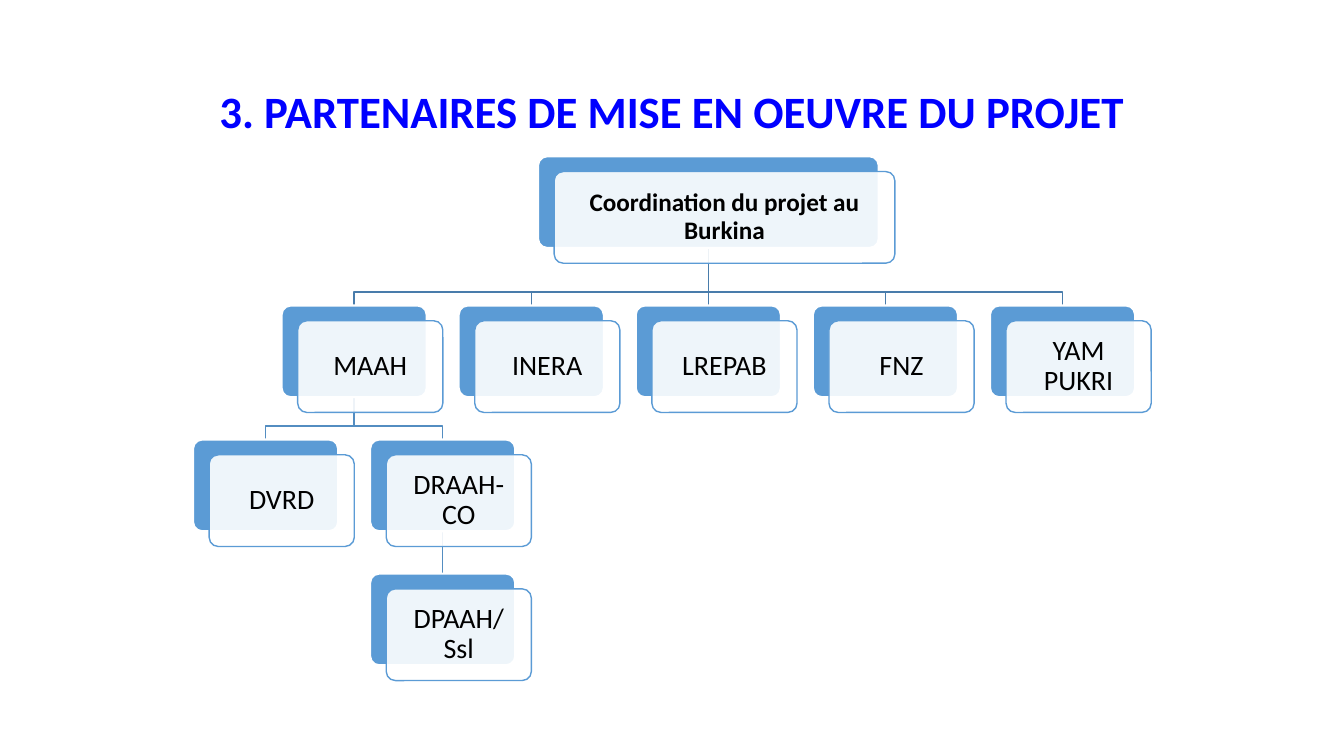
from lxml.etree import SubElement
from pptx import Presentation
from pptx.dml.color import RGBColor
from pptx.enum.shapes import MSO_CONNECTOR, MSO_SHAPE
from pptx.enum.text import MSO_ANCHOR, PP_ALIGN
from pptx.oxml.ns import qn
from pptx.util import Pt

BLUE = "5B9BD5"
CARD_WIDTH, ROOT_WIDTH, CARD_HEIGHT = 103.7, 243.4, 65.5
SHIFT_X, SHIFT_Y = 11.5, 10.9
ROOT_X, ROOT_TOP = 506, 111.6
COLUMN_STEP, ROW_STEP, FIRST_ROW = 126.5, 95.75, 218.2
BEND = 9.7

PARTNERS = ["MAAH", "INERA", "LREPAB", "FNZ", "YAM PUKRI"]
DIRECTORATES = ["DVRD", "DRAAH-CO"]


def colour(value):
    return RGBColor.from_string(value)


def write_text(shape, text, size, text_colour, bold, inset):
    frame = shape.text_frame
    frame.word_wrap = True
    frame.vertical_anchor = MSO_ANCHOR.MIDDLE
    frame.margin_left = frame.margin_right = Pt(inset)
    frame.margin_top = frame.margin_bottom = Pt(inset)
    para = frame.paragraphs[0]
    para.text = text
    para.alignment = PP_ALIGN.CENTER
    para.line_spacing = 0.9
    para.font.name = "Calibri"
    para.font.size = Pt(size)
    para.font.bold = bold
    para.font.color.rgb = colour(text_colour)


def add_title(page, text):
    box = page.shapes.add_textbox(Pt(66), Pt(60), Pt(828), Pt(42.4))
    write_text(box, text, 32, "0000FF", True, 3.6)


def add_plate(page, left, top, width, fill, line, weight):
    plate = page.shapes.add_shape(MSO_SHAPE.ROUNDED_RECTANGLE, Pt(left), Pt(top),
                                  Pt(width), Pt(CARD_HEIGHT))
    plate.adjustments[0] = 0.1
    plate.shadow.inherit = False
    plate.fill.solid()
    plate.fill.fore_color.rgb = colour(fill)
    plate.line.color.rgb = colour(line)
    plate.line.width = Pt(weight)
    return plate


def add_card(page, text, centre, top, width=CARD_WIDTH, size=20, bold=False):
    left = centre - width / 2
    add_plate(page, left, top, width, BLUE, "FFFFFF", 1.5)
    front = add_plate(page, left + SHIFT_X, top + SHIFT_Y, width, "FFFFFF", BLUE, 1)
    fill_colour = front.fill._xPr.find(qn("a:solidFill"))[0]
    SubElement(fill_colour, qn("a:alpha"), val="90000")
    write_text(front, text, size, "000000", bold, 7.8)


def add_link(page, parent, parent_top, child, child_top, line_colour):
    start = parent_top + CARD_HEIGHT
    if parent == child:
        link = page.shapes.add_connector(MSO_CONNECTOR.STRAIGHT, Pt(parent), Pt(start),
                                         Pt(child), Pt(child_top))
        SubElement(link._element.spPr, qn("a:effectLst"))
    else:
        bend = child_top - BEND
        builder = page.shapes.build_freeform(Pt(parent), Pt(start))
        corners = [(parent, bend), (child, bend), (child, child_top)]
        builder.add_line_segments([(Pt(x), Pt(y)) for x, y in corners], close=False)
        link = builder.convert_to_shape()
        link.fill.background()
        link.shadow.inherit = False
    link.line.color.rgb = colour(line_colour)
    link.line.width = Pt(1)


def main():
    deck = Presentation()
    deck.slide_width, deck.slide_height = Pt(960), Pt(540)
    page = deck.slides.add_slide(deck.slide_layouts[6])
    add_title(page, "3. PARTENAIRES DE MISE EN OEUVRE DU PROJET")

    partner_x = [ROOT_X + (i - 2) * COLUMN_STEP for i in range(len(PARTNERS))]
    directorate_x = [partner_x[0] + (i - 0.5) * COLUMN_STEP
                     for i in range(len(DIRECTORATES))]
    second_row, third_row = FIRST_ROW + ROW_STEP, FIRST_ROW + 2 * ROW_STEP

    for centre in partner_x:
        add_link(page, ROOT_X, ROOT_TOP, centre, FIRST_ROW, "497CAB")
    for centre in directorate_x:
        add_link(page, partner_x[0], FIRST_ROW, centre, second_row, "538DC1")
    add_link(page, directorate_x[1], second_row, directorate_x[1], third_row, "538DC1")

    add_card(page, "Coordination du projet au Burkina", ROOT_X, ROOT_TOP,
             ROOT_WIDTH, 18, True)
    for name, centre in zip(PARTNERS, partner_x):
        add_card(page, name, centre, FIRST_ROW)
    for name, centre in zip(DIRECTORATES, directorate_x):
        add_card(page, name, centre, second_row)
    add_card(page, "DPAAH/Ssl", directorate_x[1], third_row)

    deck.save("out.pptx")


if __name__ == "__main__":
    main()
